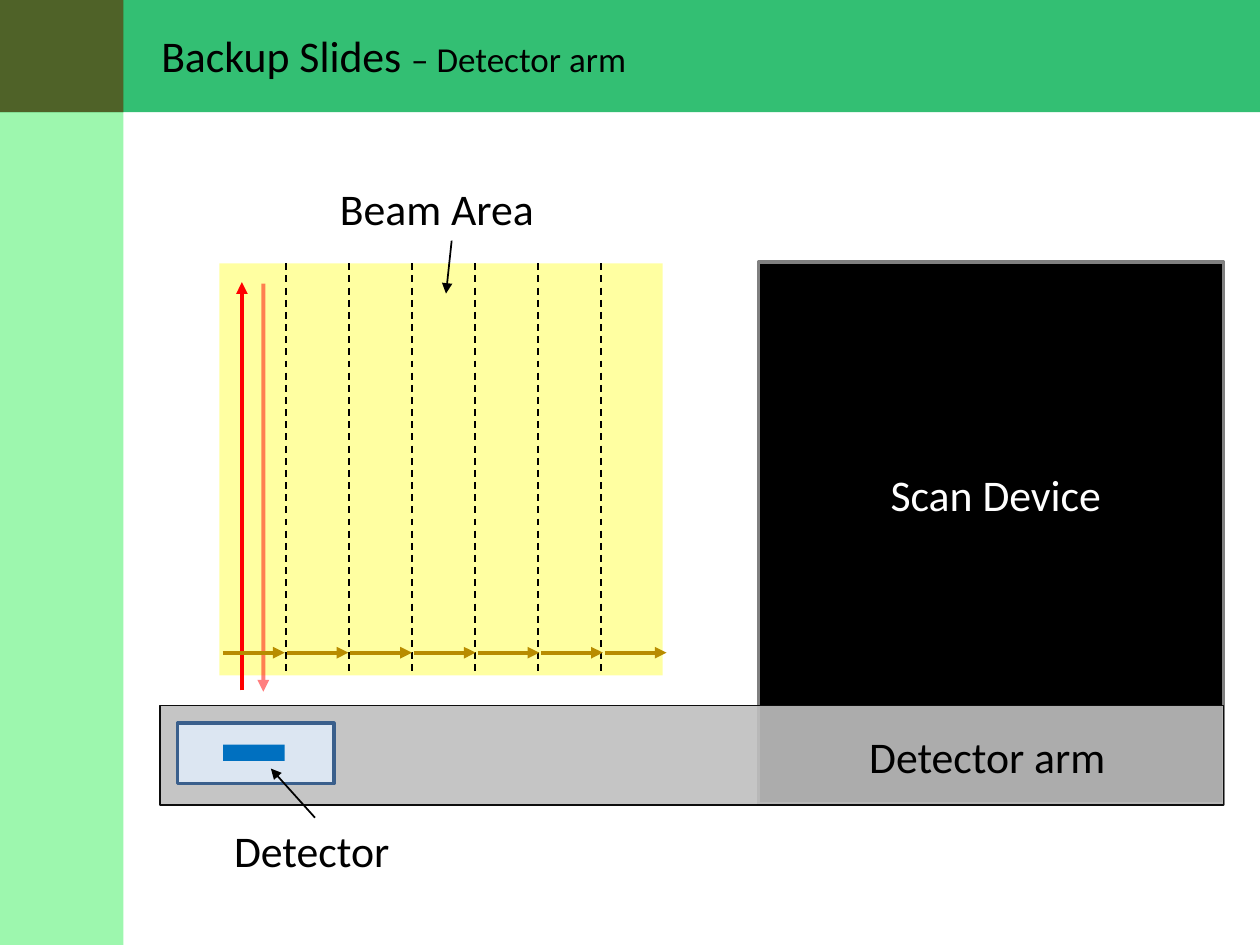
from lxml.etree import SubElement
from pptx import Presentation
from pptx.dml.color import RGBColor
from pptx.enum.dml import MSO_LINE
from pptx.enum.shapes import MSO_CONNECTOR, MSO_SHAPE
from pptx.enum.text import MSO_ANCHOR, PP_ALIGN
from pptx.oxml.ns import qn
from pptx.util import Inches, Pt

COLORS = {
    "mint": "7DF594", "green": "00B050", "olive": "4F6228",
    "black": "000000", "white": "FFFFFF", "gray": "808080",
    "silver": "BFBFBF", "ink": "0D0D0D", "pale": "DCE6F2",
    "navy": "3A5F8C", "blue": "0070C0", "yellow": "FFFF00",
    "red": "FF0000", "gold": "B88C00",
}
FRAME = {"word_wrap": True, "vertical_anchor": MSO_ANCHOR.TOP}
FONT = {"name": "Calibri", "bold": False}


class SlideBuilder:
    def __init__(self, slide):
        self.s = slide

    def apply(self, target, values):
        for name, value in values.items():
            setattr(target, name, value)

    def paint(self, fill, color):
        fill.solid()
        fill.fore_color.rgb = RGBColor.from_string(COLORS[color])

    def fade(self, sp, alpha):
        if alpha < 100:
            srgb = next(sp.element.spPr.iter(qn("a:srgbClr")))
            SubElement(srgb, qn("a:alpha"), val=str(alpha * 1000))

    def rect(self, box, color, alpha=100, line=None, width=2):
        sp = self.s.shapes.add_shape(MSO_SHAPE.RECTANGLE, *map(Inches, box))
        sp.shadow.inherit = False
        self.paint(sp.fill, color)
        self.fade(sp, alpha)
        if line:
            self.paint(sp.line.fill, line)
            sp.line.width = Pt(width)
        else:
            sp.line.fill.background()

    def add_text(self, sp, runs, color):
        tf = sp.text_frame
        self.apply(tf, FRAME)
        p = tf.paragraphs[0]
        p.alignment = PP_ALIGN.LEFT
        for text, size in runs:
            r = p.add_run()
            r.text = text
            self.apply(r.font, {**FONT, "size": Pt(size)})
            r.font.color.rgb = RGBColor.from_string(COLORS[color])

    def label(self, box, text, color="black"):
        sp = self.s.shapes.add_textbox(*map(Inches, box))
        self.add_text(sp, [(text, 25)], color)
        return sp

    def title(self, box, runs):
        sp = self.s.shapes.title
        names = ("left", "top", "width", "height")
        self.apply(sp, dict(zip(names, map(Inches, box))))
        self.add_text(sp, runs, "black")
        sp.element.getparent().append(sp.element)

    def line(self, start, end, color="black", width=1, alpha=100,
             dash=None, arrow=True, source=None):
        cx = self.s.shapes.add_connector(
            MSO_CONNECTOR.STRAIGHT, *map(Inches, start + end))
        self.paint(cx.line.fill, color)
        self.fade(cx, alpha)
        cx.line.width = Pt(width)
        if dash:
            cx.line.dash_style = dash
        spPr = cx.element.spPr
        if arrow:
            SubElement(spPr.find(qn("a:ln")), qn("a:tailEnd"), type="triangle")
        SubElement(spPr, qn("a:effectLst"))
        if source:
            cx.begin_connect(*source)


def main():
    prs = Presentation()
    prs.slide_width, prs.slide_height = Inches(10), Inches(7.5)
    b = SlideBuilder(prs.slides.add_slide(prs.slide_layouts[5]))

    b.rect((0, 0, 0.98, 7.5), "mint", 75)
    b.rect((0, 0, 10, 0.89), "green", 80)
    b.rect((0, 0, 0.98, 0.89), "olive")
    b.title((1.18, 0.18, 8.59, 0.52),
            [("Backup Slides ", 25), ("– Detector arm", 20)])

    b.rect((6.02, 2.08, 3.69, 4.3), "black", line="gray")
    b.rect((1.27, 5.6, 8.44, 0.79), "silver", 90, "ink", 1)
    b.rect((1.41, 5.74, 1.24, 0.48), "pale", line="navy")
    b.rect((1.77, 5.91, 0.49, 0.13), "blue")
    b.rect((1.74, 2.09, 3.52, 3.27), "yellow", 37)

    b.line((1.92, 5.48), (1.92, 2.24), "red", 2.25)
    for i in range(6):
        x = 2.27 + 0.5 * i
        b.line((x, 2.09), (x, 5.36), dash=MSO_LINE.DASH, arrow=False)
    b.line((2.09, 2.25), (2.09, 5.49), "red", 2.25, 50)
    for i in range(7):
        x = 1.77 + 0.505 * i
        b.line((x, 5.18), (x + 0.49, 5.18), "gold", 2.25)

    b.label((6.97, 3.66, 1.97, 0.52), "Scan Device", "white")
    beam = b.label((2.6, 1.39, 1.97, 0.52), "Beam Area")
    b.line((3.59, 1.91), (3.54, 2.33), source=(beam, 2))
    b.label((6.8, 5.74, 2.19, 0.52), "Detector arm")
    detector = b.label((1.76, 6.49, 1.48, 0.52), "Detector")
    b.line((2.5, 6.49), (2.15, 6.1), source=(detector, 0))

    prs.save("out.pptx")


if __name__ == "__main__":
    main()
